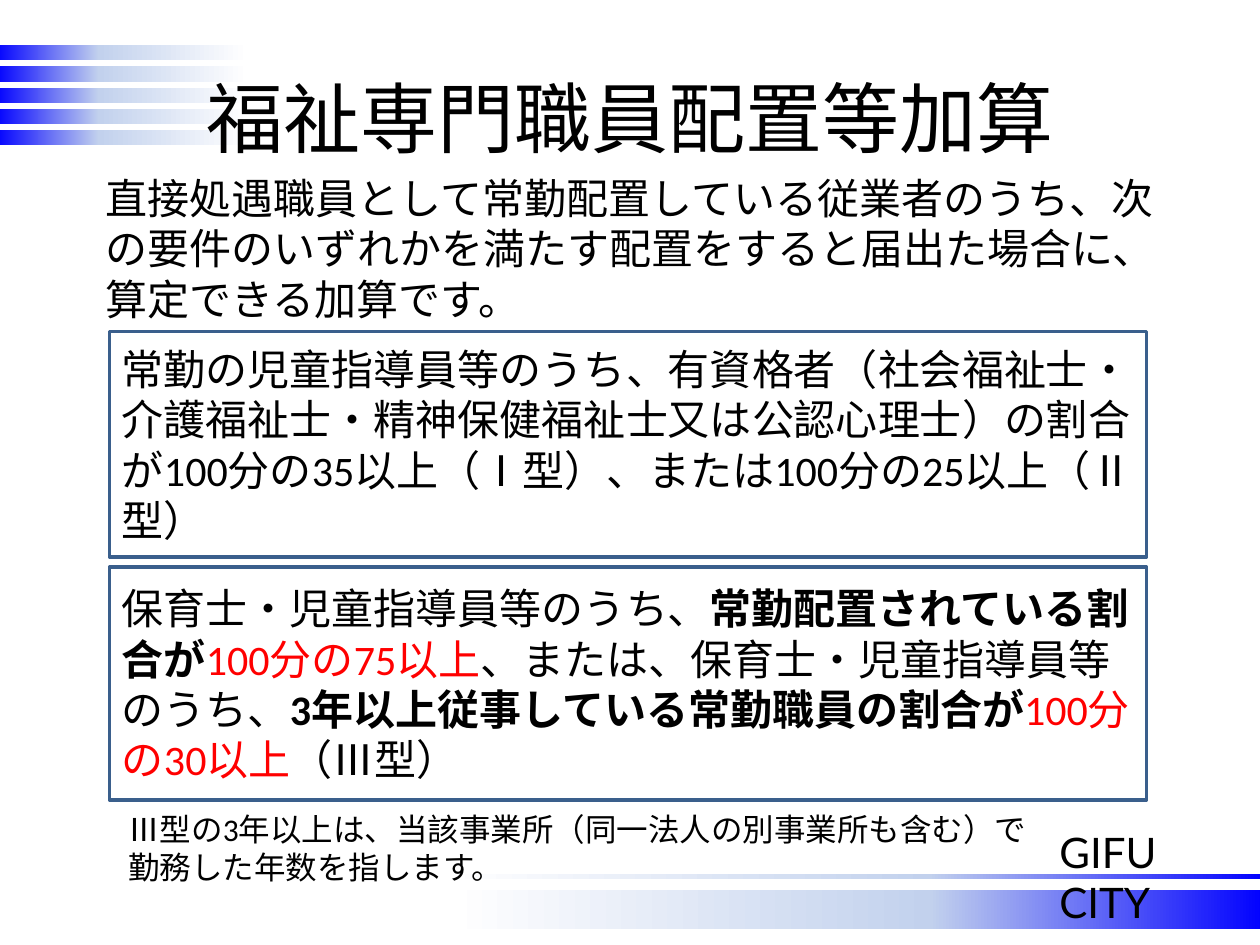
from copy import deepcopy

from lxml import etree
from pptx import Presentation
from pptx.dml.color import RGBColor
from pptx.enum import shapes, text
from pptx.oxml import ns
from pptx.util import Inches, Pt

BLUE = RGBColor(0x00, 0x00, 0xFF)
PALE = RGBColor(0xC2, 0xD1, 0xED)
WHITE = RGBColor(0xFF, 0xFF, 0xFF)
BLACK = RGBColor(0x00, 0x00, 0x00)
RED = RGBColor(0xFF, 0x00, 0x00)
OUTLINE = RGBColor(0x3A, 0x5F, 0x8C)

prs = Presentation()
prs.slide_width, prs.slide_height = Inches(10), Inches(7.5)
slide = prs.slides.add_slide(prs.slide_layouts[5])


def add_rectangle(left, top, width, height):
    rectangle = slide.shapes.add_shape(
        shapes.MSO_SHAPE.RECTANGLE,
        Inches(left), Inches(top), Inches(width), Inches(height))
    rectangle.shadow.inherit = False
    return rectangle


def write(frame, paragraphs, size, typeface="Calibri",
          align=text.PP_ALIGN.LEFT, anchor=text.MSO_ANCHOR.TOP):
    """Fill a frame with paragraphs, each a list of (words, format) runs."""
    frame.word_wrap = True
    frame.vertical_anchor = anchor
    for number, runs in enumerate(paragraphs):
        paragraph = frame.paragraphs[0] if number == 0 else frame.add_paragraph()
        paragraph.alignment = align
        for words, look in runs:
            run = paragraph.add_run()
            run.text = words
            look = {"color": BLACK, "bold": False} | look
            run.font.color.rgb = look.pop("color")
            for key, value in {"size": Pt(size), "name": typeface, **look}.items():
                setattr(run.font, key, value)
            east_asian = etree.SubElement(run.font._element, ns.qn("a:ea"))
            east_asian.set("typeface", typeface)


# Gradient bands: two along the bottom, five at the top left
bands = [(2.44, 7.06, 7.6, 0.31, 180)]
bands += [(-0.04, 0.36 + 0.1675 * row, 2.36, 0.12, 0) for row in range(5)]
bands += [(2.43, 6.94, 7.6, 0.04, 180)]
for left, top, width, height, rotation in bands:
    band = add_rectangle(left, top, width, height)
    band.rotation = rotation
    band.line.fill.background()
    band.fill.gradient()
    band.fill.gradient_angle = 0
    stop_list = band.fill._xPr.find(ns.qn("a:gradFill")).find(ns.qn("a:gsLst"))
    stop_list.append(deepcopy(stop_list[-1]))
    for stop, position, color in zip(
            band.fill.gradient_stops, (0, 0.35, 0.85), (BLUE, PALE, WHITE)):
        stop.position = position
        stop.color.rgb = color

# Title, moved in front of the bands
title = slide.shapes.title
slide.shapes._spTree.append(title._element)
title.left, title.top = Inches(0.5), Inches(0.3)
title.width, title.height = Inches(9), Inches(1.25)
write(title.text_frame, [[("福祉専門職員配置等加算", {})]], 44,
      "Noto Sans CJK JP", text.PP_ALIGN.CENTER, text.MSO_ANCHOR.MIDDLE)

# City name, introduction and footnote
plain_texts = [
    ((8.31, 6.51, 1.6, 0.5), 24, "Lato", ["GIFU CITY"]),
    ((0.74, 1.32, 8.76, 1.31), 24, "Calibri",
     ["直接処遇職員として常勤配置している従業者のうち、次の要件のいずれかを"
      "満たす配置をすると届出た場合に、算定できる加算です。"]),
    ((0.92, 6.38, 8.19, 0.71), 18, "Calibri",
     ["Ⅲ型の3年以上は、当該事業所（同一法人の別事業所も含む）で",
      "勤務した年数を指します。"]),
]
for place, size, typeface, lines in plain_texts:
    box = slide.shapes.add_textbox(*map(Inches, place))
    write(box.text_frame, [[(line, {})] for line in lines], size, typeface)

# Framed requirements
bold, red = {"bold": True}, {"color": RED}
requirements = [
    (2.63, 1.79, [
        ("常勤の児童指導員等のうち、有資格者（社会福祉士・介護福祉士・"
         "精神保健福祉士又は公認心理士）の割合が100分の35以上（Ⅰ型）、"
         "または100分の25以上（Ⅱ型）", {})]),
    (4.5, 1.85, [
        ("保育士・児童指導員等のうち、", {}),
        ("常勤配置されている割合が", bold),
        ("100分の75以上", red),
        ("、または、保育士・児童指導員等のうち、", {}),
        ("3年以上従事している常勤職員の割合が", bold),
        ("100分の30以上", red),
        ("（Ⅲ型）", {})]),
]
for top, height, runs in requirements:
    requirement = add_rectangle(0.87, top, 8.23, height)
    requirement.fill.solid()
    requirement.fill.fore_color.rgb = WHITE
    requirement.line.color.rgb = OUTLINE
    requirement.line.width = Pt(2)
    write(requirement.text_frame, [runs], 24, anchor=text.MSO_ANCHOR.MIDDLE)

prs.save("out.pptx")
